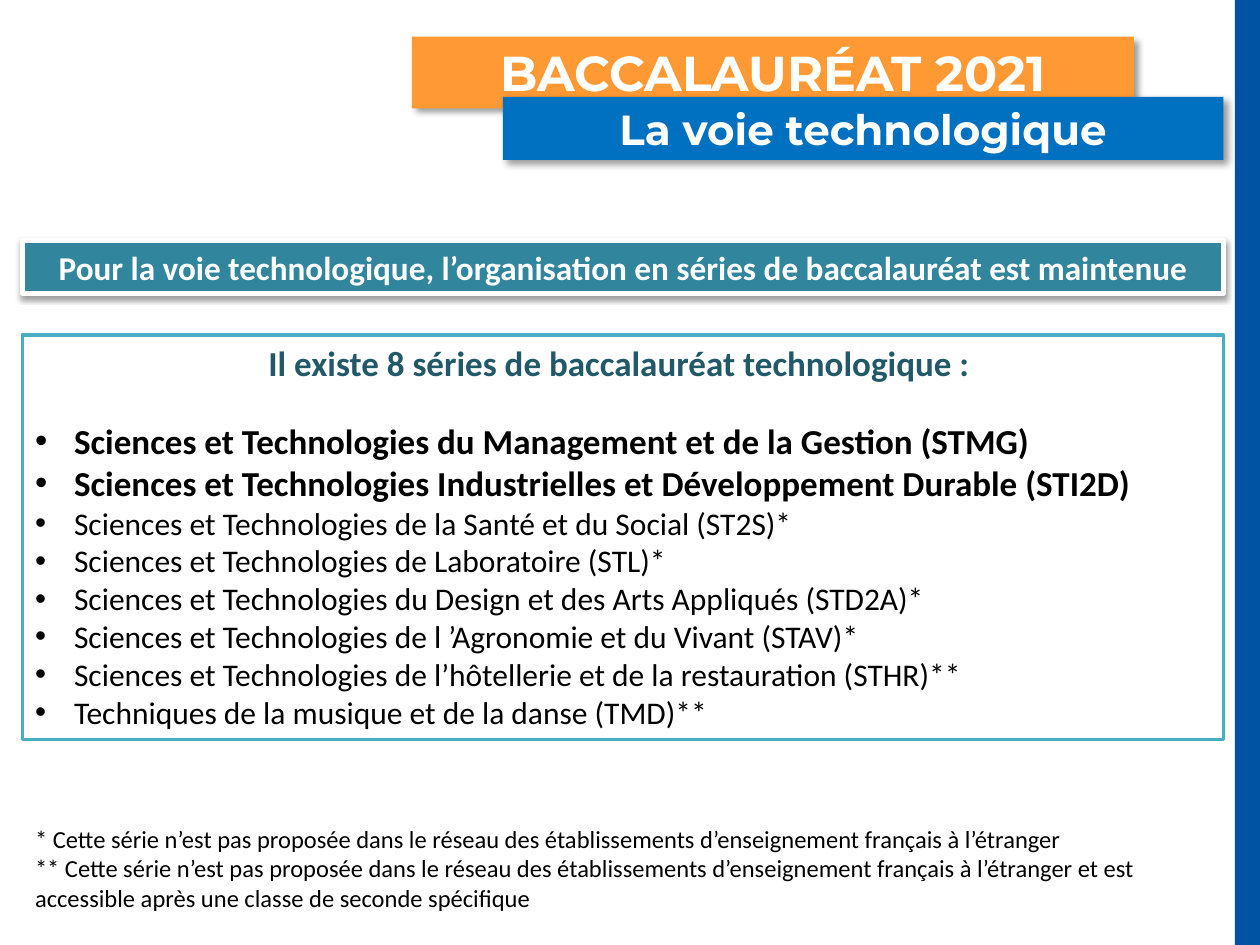
from dataclasses import dataclass

from lxml import etree
from pptx import Presentation
from pptx.dml.color import RGBColor
from pptx.enum.shapes import MSO_SHAPE
from pptx.enum.text import MSO_ANCHOR, MSO_AUTO_SIZE, PP_ALIGN
from pptx.oxml.ns import qn
from pptx.util import Inches, Pt

RECT = MSO_SHAPE.RECTANGLE
TOP = MSO_ANCHOR.TOP
GROW = MSO_AUTO_SIZE.SHAPE_TO_FIT_TEXT
LEFT, MID = PP_ALIGN.LEFT, PP_ALIGN.CENTER
WIDTH, HEIGHT = Inches(10), Inches(7.5)
COLS, ROWS = 100, 75
EDGE, SPAN = 1.8, 95.3
SOFT = (40, 4, 3, 45)
DROP = (38, 3.1, 1.6, 90)


@dataclass(frozen=True)
class Theme:
    """Hold the colours, fonts and type sizes."""
    white: str = "FFFFFF"
    black: str = "000000"
    navy: str = "0052A2"
    orange: str = "FF9933"
    blue: str = "0070C0"
    teal: str = "31859C"
    aqua: str = "4BACC6"
    deep: str = "215968"
    head: str = "Montserrat"
    body: str = "Calibri"
    title: int = 28
    sub: int = 24
    lead: int = 20
    claim: int = 19
    item: int = 18
    note: int = 14
    gap: float = 20.7


THEME = Theme()
MAJOR = (
    "Sciences et Technologies du Management et de la Gestion (STMG)",
    "Sciences et Technologies Industrielles et Développement Durable (STI2D)",
)
MINOR = (
    "Sciences et Technologies de la Santé et du Social (ST2S)*",
    "Sciences et Technologies de Laboratoire (STL)*",
    "Sciences et Technologies du Design et des Arts Appliqués (STD2A)*",
    "Sciences et Technologies de l ’Agronomie et du Vivant (STAV)*",
    "Sciences et Technologies de l’hôtellerie et de la restauration (STHR)**",
    "Techniques de la musique et de la danse (TMD)**",
)
NOTES = (
    "* Cette série n’est pas proposée dans le réseau des établissements "
    "d’enseignement français à l’étranger",
    "** Cette série n’est pas proposée dans le réseau des établissements "
    "d’enseignement français à l’étranger et est accessible après une classe "
    "de seconde spécifique",
)


def place(col, row, cols, rows):
    """Turn grid columns and rows into slide lengths."""
    return (int(WIDTH * col / COLS), int(HEIGHT * row / ROWS),
            int(WIDTH * cols / COLS), int(HEIGHT * rows / ROWS))


def cast(shape, alpha, blur, dist, angle):
    """Give a shape an outer shadow."""
    effects = shape._element.spPr.find(qn("a:effectLst"))
    outer = etree.SubElement(
        effects, qn("a:outerShdw"), blurRad=str(Pt(blur)), dist=str(Pt(dist)),
        dir=str(angle * 60000), algn="tl", rotWithShape="0")
    tint = etree.SubElement(outer, qn("a:srgbClr"), val=THEME.black)
    etree.SubElement(tint, qn("a:alpha"), val=str(alpha * 1000))


def panel(slide, area, fill=None, line=None, width=0, shadow=None):
    """Draw a rectangle and return it."""
    shape = slide.shapes.add_shape(RECT, *place(*area))
    shape.shadow.inherit = False
    if fill:
        shape.fill.solid()
        shape.fill.fore_color.rgb = RGBColor.from_string(fill)
    else:
        shape.fill.background()
    if line:
        shape.line.color.rgb = RGBColor.from_string(line)
        shape.line.width = Pt(width)
    else:
        shape.line.fill.background()
    if shadow:
        cast(shape, *shadow)
    return shape


def frame(shape):
    """Set up the text frame of a shape and return it."""
    text = shape.text_frame
    text.word_wrap = True
    text.auto_size = GROW
    text.vertical_anchor = TOP
    return text


def dot(para):
    """Give a paragraph a hanging bullet."""
    props = para._p.get_or_add_pPr()
    props.set("marL", str(Inches(0.31)))
    props.set("indent", str(Inches(-0.31)))
    etree.SubElement(props, qn("a:buFont"), typeface="Arial")
    etree.SubElement(props, qn("a:buChar"), char="•")


def write(box, text, size, color=THEME.black, font=THEME.body, bold=False,
          align=LEFT, bullet=False, before=0):
    """Add one formatted paragraph to a text frame."""
    para = box.paragraphs[0] if not box.text else box.add_paragraph()
    para.alignment = align
    if before:
        para.space_before = Pt(before)
    if bullet:
        dot(para)
    run = para.add_run()
    run.text = text
    run.font.size = Pt(size)
    run.font.name = font
    run.font.bold = bold
    run.font.color.rgb = RGBColor.from_string(color)


def banner(slide, area, text, size, font, **look):
    """Draw a filled panel with a centred white heading."""
    box = frame(panel(slide, area, **look))
    write(box, text, size, THEME.white, font, bold=True, align=MID)


def series(slide):
    """Draw the framed list of series."""
    area = (EDGE, 26.6, SPAN, 32.1)
    box = frame(panel(slide, area, line=THEME.aqua, width=2))
    write(box, "Il existe 8 séries de baccalauréat technologique : ",
          THEME.lead, THEME.deep, bold=True, align=MID)
    for rank, name in enumerate(MAJOR):
        write(box, name, THEME.lead, bold=True, bullet=True,
              before=0 if rank else THEME.gap)
    for name in MINOR:
        write(box, name, THEME.item, bullet=True)


def notes(slide):
    """Write the two footnotes."""
    area = place(EDGE, 64.9, SPAN, 8.1)
    box = frame(slide.shapes.add_textbox(*area))
    for text in NOTES:
        write(box, text, THEME.note)


def main():
    """Build and save the slide."""
    deck = Presentation()
    deck.slide_width, deck.slide_height = WIDTH, HEIGHT
    slide = deck.slides.add_slide(deck.slide_layouts[6])
    panel(slide, (98, 0, 2, ROWS), fill=THEME.navy)
    banner(slide, (32.7, 2.9, 57.3, 5.7), "BACCALAURÉAT 2021",
           THEME.title, THEME.head, fill=THEME.orange, shadow=SOFT)
    banner(slide, (39.9, 7.7, 57.2, 5), "La voie technologique",
           THEME.sub, THEME.head, fill=THEME.blue, shadow=SOFT)
    banner(slide, (EDGE, 19.1, SPAN, 4.2),
           "Pour la voie technologique, l’organisation en séries de "
           "baccalauréat est maintenue", THEME.claim, THEME.body,
           fill=THEME.teal, line=THEME.white, width=3, shadow=DROP)
    series(slide)
    notes(slide)
    deck.save("out.pptx")


if __name__ == "__main__":
    main()
